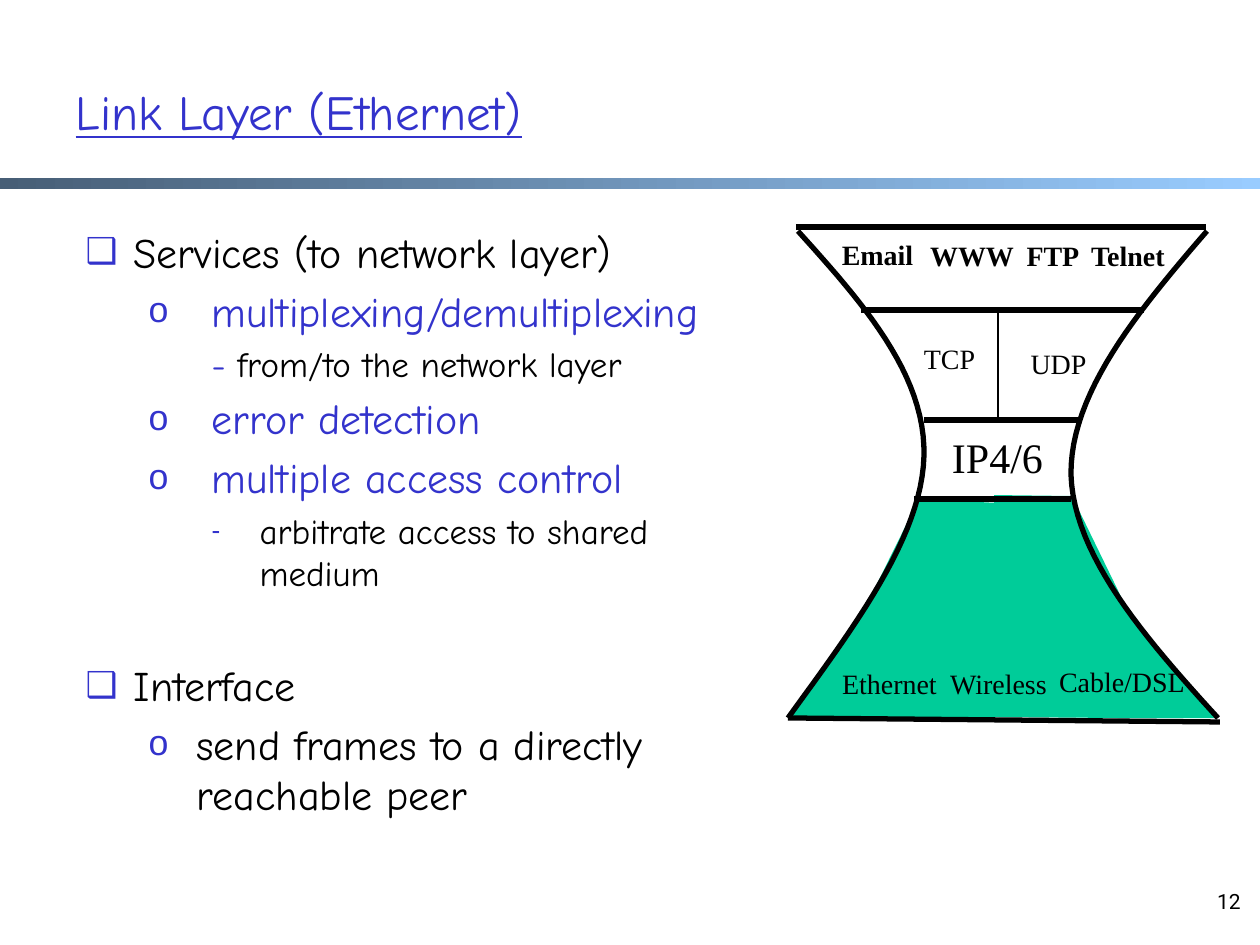
"""Build the Link Layer (Ethernet) slide with its hourglass diagram of protocols."""
from dataclasses import dataclass

from lxml.etree import SubElement
from pptx import Presentation
from pptx.dml.color import RGBColor
from pptx.enum.shapes import MSO_CONNECTOR as Connector, MSO_SHAPE as Preset
from pptx.enum.text import MSO_ANCHOR as Anchor, MSO_AUTO_SIZE as AutoSize, PP_ALIGN as Align
from pptx.oxml.ns import qn
from pptx.util import Emu, Pt


@dataclass(frozen=True)
class Theme:
    ink: str = "000000"
    accent: str = "3333CC"
    base: str = "00CC99"
    bar_start: str = "475E76"
    bar_end: str = "99CCFF"
    body_font: str = "Comic Neue"
    label_font: str = "Times New Roman"
    number_font: str = "Roboto"
    title: int = 28
    item: int = 24
    detail: int = 20
    label: int = 16
    number: int = 12
    heavy: int = 3
    thin: int = 1


THEME = Theme()
EMU_PER_PX = 914400 / 126
PAGE = (1260, 945)
CURVE_STEPS = 24

TITLE = ("Link Layer (Ethernet)", (63, 32, 1144, 158))
NUMBER = ("12", (959, 882, 294, 63))
BAR = (0, 178, 1260, 11)
BODY = (73, 220, 713, 640)

BLUE, BLACK = THEME.accent, THEME.ink
BULLETS = [
    dict(runs=[("Services (to network layer)", BLACK)], level=0, mark="❑", margin=48, hang=48),
    dict(runs=[("multiplexing/demultiplexing", BLUE)], level=1, mark="o", margin=126, hang=63),
    dict(runs=[("- ", BLUE), ("from/to the network layer", BLACK)], level=2, margin=126),
    dict(runs=[("error detection", BLUE)], level=1, mark="o", margin=126, hang=63),
    dict(runs=[("multiple access control", BLUE)], level=1, mark="o", margin=126, hang=63),
    dict(runs=[("arbitrate access to shared medium", BLACK)], level=2, mark="-",
         margin=174, hang=48),
    dict(runs=[("Interface", BLACK)], level=0, mark="❑", margin=48, hang=48, before=38),
    dict(runs=[("send frames to a directly reachable peer", BLACK)], level=1, mark="o",
         margin=111, hang=48),
]

BASE_HALVES = [
    [(994, 495), (995, 611), (994, 717), (1118, 718), (1215, 718), (1128, 611), (1072, 496)],
    [(919, 499), (866, 606), (788, 718), (995, 717), (995, 713), (998, 616), (998, 503)],
]
SIDES = [
    [(798, 231), (862, 302), (926, 374), (924, 456), (922, 537), (854, 627), (788, 718)],
    [(1207, 231), (1138, 311), (1070, 393), (1071, 475), (1074, 556), (1145, 638), (1218, 718)],
]
RULES = [
    ((796, 227), (1206, 227), THEME.heavy),
    ((861, 310), (1144, 310), THEME.heavy),
    ((998, 310), (998, 420), THEME.thin),
    ((924, 420), (1081, 420), THEME.heavy),
    ((914, 499), (1071, 499), THEME.heavy),
    ((788, 718), (1220, 722), THEME.heavy),
]
LABELS = [
    ("Email", (829, 231, 97, 44), dict(bold=True)),
    ("WWW", (917, 232, 110, 44), dict(bold=True)),
    ("FTP", (1014, 232, 78, 44), dict(bold=True)),
    ("Telnet", (1077, 232, 102, 44), dict(bold=True)),
    ("TCP", (911, 335, 77, 44), {}),
    ("UDP", (1018, 340, 81, 44), {}),
    ("IP4/6", (939, 425, 117, 63), dict(size=THEME.item)),
    ("Ethernet", (829, 660, 121, 44), {}),
    ("Wireless", (937, 660, 123, 44), {}),
    ("Cable/DSL", (1046, 658, 152, 44), {}),
]


def px(*values):
    return [Emu(round(value * EMU_PER_PX)) for value in values]


def rgb(code):
    return RGBColor.from_string(code)


def write(para, text, *, font=THEME.label_font, size=THEME.label, color=THEME.ink,
          bold=False, underline=False, align=Align.LEFT):
    para.alignment = align
    span = para.add_run()
    span.text = text
    span.font.name, span.font.size = font, Pt(size)
    span.font.color.rgb = rgb(color)
    span.font.bold, span.font.underline = bold, underline


def place(shape, frame):
    shape.left, shape.top, shape.width, shape.height = px(*frame)


def set_bullet(para, mark, margin, hang):
    props = para._p.get_or_add_pPr()
    props.set("marL", str(px(margin)[0]))
    props.set("indent", str(-px(hang)[0]))
    if not mark:
        SubElement(props, qn("a:buNone"))
        return
    color = SubElement(props, qn("a:buClr"))
    SubElement(color, qn("a:srgbClr"), val=THEME.accent)
    SubElement(props, qn("a:buSzPct"), val="75000" if mark == "-" else "85000")
    SubElement(props, qn("a:buChar"), char=mark)


def add_bullets(frame):
    frame.auto_size, frame.word_wrap = AutoSize.NONE, True
    for index, item in enumerate(BULLETS):
        para = frame.add_paragraph() if index else frame.paragraphs[0]
        para.level = item["level"]
        size = THEME.detail if para.level == 2 else THEME.item
        for text, color in item["runs"]:
            write(para, text, font=THEME.body_font, size=size, color=color)
        set_bullet(para, item.get("mark"), item["margin"], item.get("hang", 0))
        if "before" in item:
            para.space_before = Pt(item["before"])


def cubic(start, first, second, end):
    for step in range(1, CURVE_STEPS + 1):
        t = step / CURVE_STEPS
        weights = ((1 - t) ** 3, 3 * t * (1 - t) ** 2, 3 * t * t * (1 - t), t ** 3)
        points = (start, first, second, end)
        yield tuple(sum(w * p[axis] for w, p in zip(weights, points)) for axis in (0, 1))


def add_outline(shapes, points, closed):
    start, *rest = [px(*point) for point in points]
    builder = shapes.build_freeform(*start)
    builder.add_line_segments(rest, close=closed)
    shape = builder.convert_to_shape()
    shape.shadow.inherit = False
    return shape


def add_hourglass(shapes):
    for points in BASE_HALVES:
        half = add_outline(shapes, points, True)
        half.fill.solid()
        half.fill.fore_color.rgb = rgb(THEME.base)
        half.line.fill.background()
    for nodes in SIDES:
        side = add_outline(shapes, [nodes[0], *cubic(*nodes[:4]), *cubic(*nodes[3:])], False)
        side.fill.background()
        side.line.color.rgb, side.line.width = rgb(THEME.ink), Pt(THEME.heavy)
    for start, end, width in RULES:
        rule = shapes.add_connector(Connector.STRAIGHT, *px(*start, *end))
        rule.line.color.rgb, rule.line.width = rgb(THEME.ink), Pt(width)
        SubElement(rule._element.spPr, qn("a:effectLst"))
    for text, frame, style in LABELS:
        box = shapes.add_textbox(*px(*frame))
        box.text_frame.word_wrap = False
        write(box.text_frame.paragraphs[0], text, align=Align.CENTER, **style)


def add_bar(shapes):
    bar = shapes.add_shape(Preset.RECTANGLE, *px(*BAR))
    bar.shadow.inherit = False
    bar.line.fill.background()
    bar.fill.gradient()
    bar.fill.gradient_angle = 0
    for stop, color, position in zip(bar.fill.gradient_stops,
                                     (THEME.bar_start, THEME.bar_end), (0, 1)):
        stop.color.rgb, stop.position = rgb(color), position


def main():
    deck = Presentation()
    deck.slide_width, deck.slide_height = px(*PAGE)
    page = deck.slides.add_slide(deck.slide_layouts[1])
    title, body = page.placeholders
    place(title, TITLE[1])
    title.text_frame.auto_size = AutoSize.NONE
    title.text_frame.vertical_anchor = Anchor.MIDDLE
    write(title.text_frame.paragraphs[0], TITLE[0], font=THEME.body_font,
          size=THEME.title, color=THEME.accent, underline=True)
    place(body, BODY)
    add_bullets(body.text_frame)
    add_bar(page.shapes)
    number = page.shapes.add_textbox(*px(*NUMBER[1]))
    number.text_frame.word_wrap = True
    write(number.text_frame.paragraphs[0], NUMBER[0], font=THEME.number_font,
          size=THEME.number, align=Align.RIGHT)
    add_hourglass(page.shapes)
    deck.save("out.pptx")


if __name__ == "__main__":
    main()
